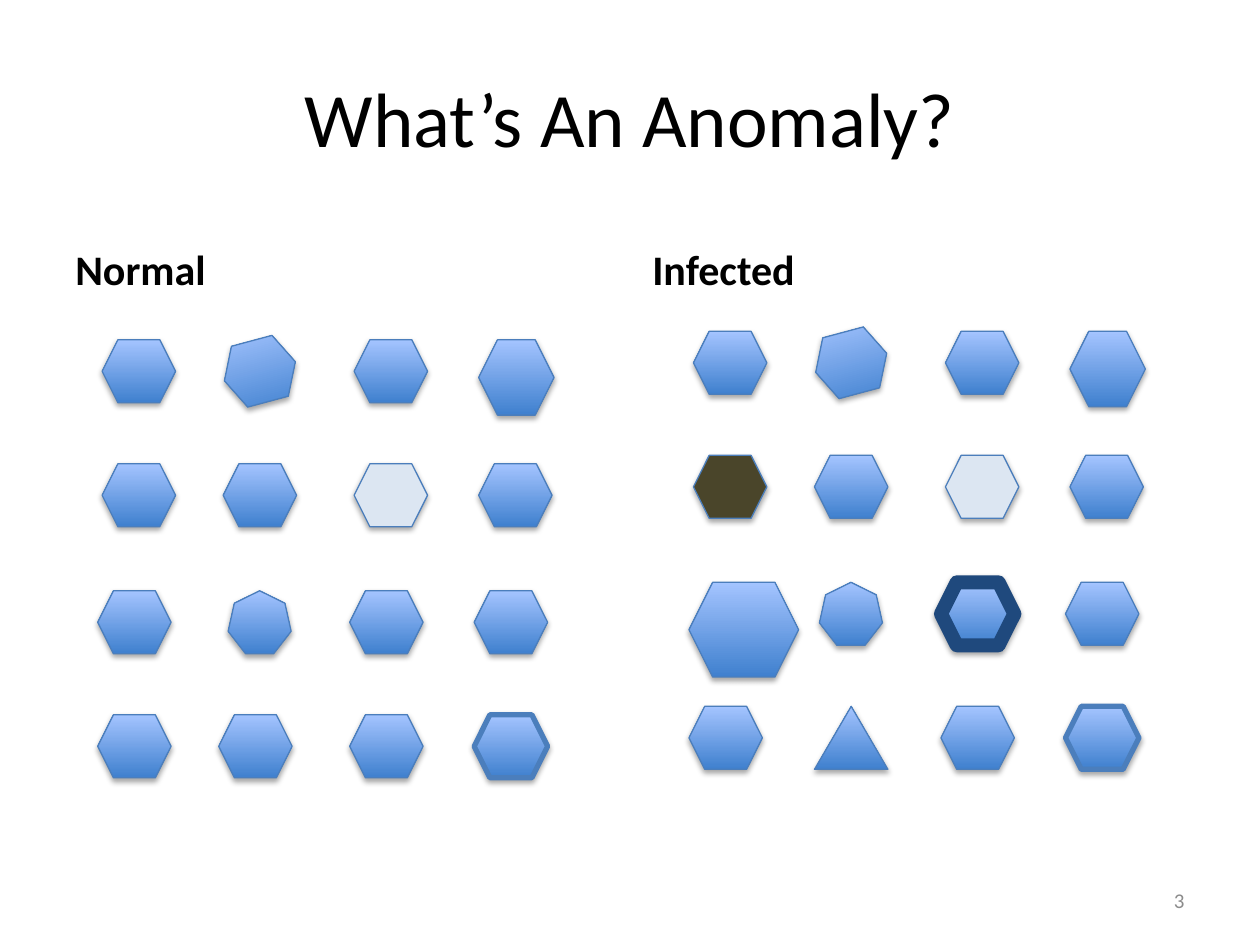
import pptx
import pptx.util
import pptx.dml.color
import pptx.enum.shapes
import pptx.enum.text
import lxml.etree

Cm = pptx.util.Cm
Pt = pptx.util.Pt
RGBColor = pptx.dml.color.RGBColor
MSO = pptx.enum.shapes.MSO_SHAPE
ANCHOR = pptx.enum.text.MSO_ANCHOR
ALIGN = pptx.enum.text.PP_ALIGN

BLACK = RGBColor(0x00, 0x00, 0x00)
GRAY = RGBColor(0x8C, 0x8C, 0x8C)
BLUE = RGBColor(0x3F, 0x80, 0xCE)
LIGHT_BLUE = RGBColor(0xA4, 0xC4, 0xFF)
OUTLINE = RGBColor(0x4B, 0x7E, 0xBC)
NAVY = RGBColor(0x1F, 0x49, 0x7D)
PALE = RGBColor(0xDC, 0xE6, 0xF2)
BROWN = RGBColor(0x4A, 0x45, 0x2A)

SHADOW = (
    '<a:outerShdw xmlns:a="http://schemas.openxmlformats.org/drawingml/2006/main"'
    ' blurRad="40000" dist="23000" dir="5400000" rotWithShape="0">'
    '<a:srgbClr val="000000"><a:alpha val="35000"/></a:srgbClr></a:outerShdw>'
)


def write(sp, text, size, color, bold, align, anchor):
    tf = sp.text_frame
    for name, value in {"word_wrap": True, "vertical_anchor": anchor}.items():
        setattr(tf, name, value)
    p = tf.paragraphs[0]
    p.alignment = align
    r = p.add_run()
    r.text = text
    for name, value in {"name": "Calibri", "size": Pt(size), "bold": bold}.items():
        setattr(r.font, name, value)
    r.font.color.rgb = color


def add_cell(s, x, y, kind=MSO.HEXAGON, w=1.48, h=1.27, dx=0, rotation=0,
             fill=None, line=OUTLINE, weight=0.75):
    sp = s.shapes.add_shape(kind, Cm(x + dx), Cm(y), Cm(w), Cm(h))
    sp.rotation = rotation
    if fill is None:
        sp.fill.gradient()
        sp.fill.gradient_angle = 90
        for stop, color in zip(sp.fill.gradient_stops, (BLUE, LIGHT_BLUE)):
            stop.color.rgb = color
    else:
        sp.fill.solid()
        sp.fill.fore_color.rgb = fill
    sp.line.color.rgb = line
    sp.line.width = Pt(weight)
    sp.shadow.inherit = False
    effects = sp._element.spPr.find(pptx.oxml.ns.qn("a:effectLst"))
    effects.append(lxml.etree.fromstring(SHADOW))


prs = pptx.Presentation()
prs.slide_width = Cm(25.4)
prs.slide_height = Cm(19.05)
s = prs.slides.add_slide(prs.slide_layouts[5])

title = s.shapes.title
box = {"left": Cm(1.27), "top": Cm(0.76), "width": Cm(22.86), "height": Cm(3.18)}
for name, value in box.items():
    setattr(title, name, value)
write(title, "What’s An Anomaly?", 44, BLACK, False, ALIGN.CENTER, ANCHOR.MIDDLE)

columns = (2.06, 4.5, 7.14, 9.65)
rows = (6.85, 9.35, 11.91, 14.41)
row_shifts = (0, 0, -0.09, -0.09)

normal = {
    (0, 1): {"rotation": 345},
    (0, 3): {"w": 1.52, "h": 1.52},
    (1, 2): {"fill": PALE},
    (2, 1): {"kind": MSO.HEPTAGON, "w": 1.27, "dx": 0.19},
    (3, 3): {"weight": 3},
}
infected = {
    **normal,
    (1, 0): {"fill": BROWN},
    (2, 0): {"w": 2.21, "h": 1.91},
    (2, 2): {"line": NAVY, "weight": 8},
    (3, 1): {"kind": MSO.ISOSCELES_TRIANGLE, "dx": 0.09},
}
panels = (
    ("Normal", 1.27, 0, 0, normal),
    ("Infected", 12.9, 11.92, -0.17, infected),
)
for label, label_x, panel_x, panel_y, variants in panels:
    sp = s.shapes.add_textbox(Cm(label_x), Cm(4.27), Cm(11.23), Cm(1.78))
    write(sp, label, 24, BLACK, True, ALIGN.LEFT, ANCHOR.BOTTOM)
    for i, y in enumerate(rows):
        for j, x in enumerate(columns):
            add_cell(s, panel_x + x + row_shifts[i], panel_y + y,
                     **variants.get((i, j), {}))

number = s.shapes.add_textbox(Cm(18.2), Cm(17.65), Cm(5.93), Cm(1.01))
write(number, "3", 12, GRAY, False, ALIGN.RIGHT, ANCHOR.MIDDLE)

prs.save("out.pptx")
